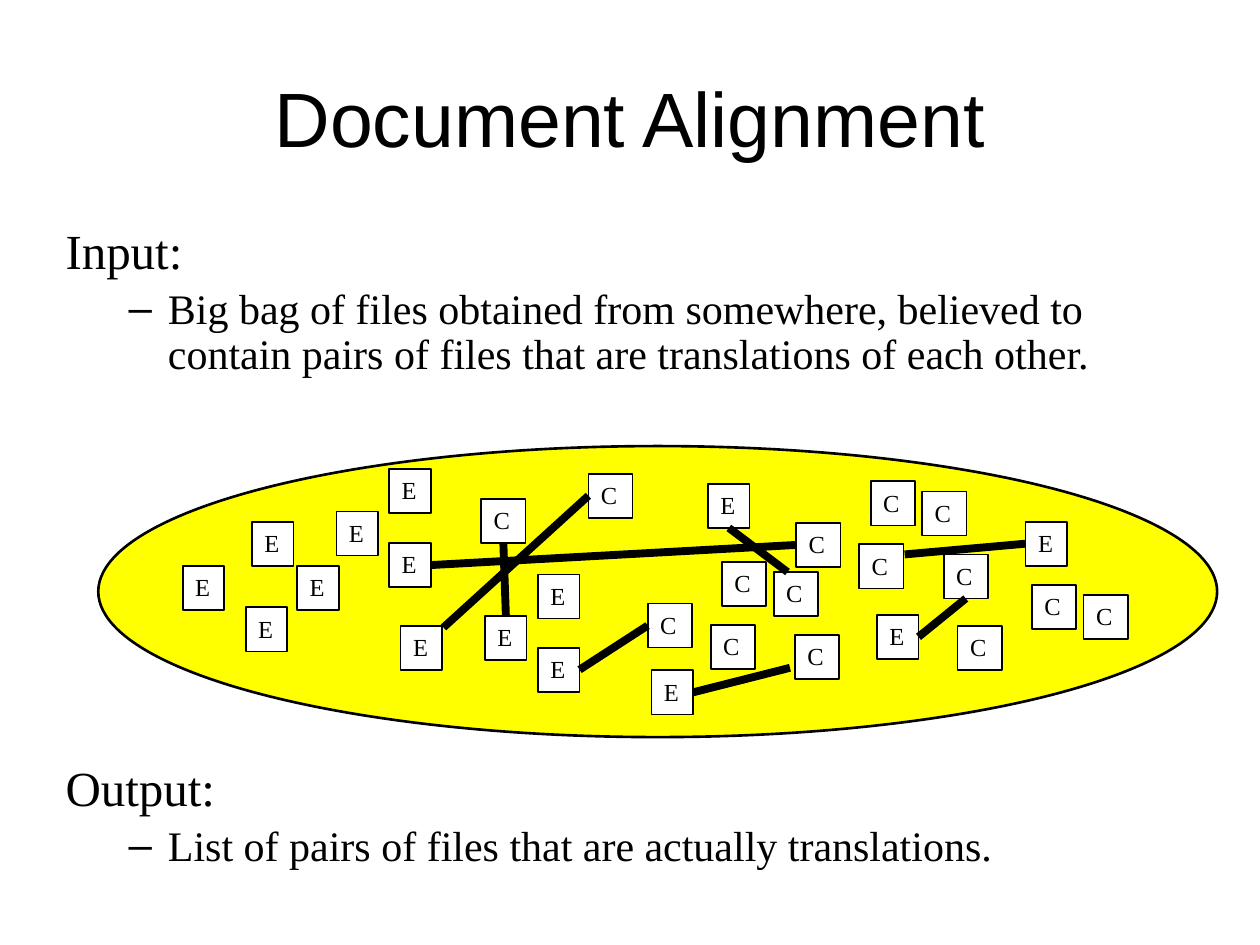
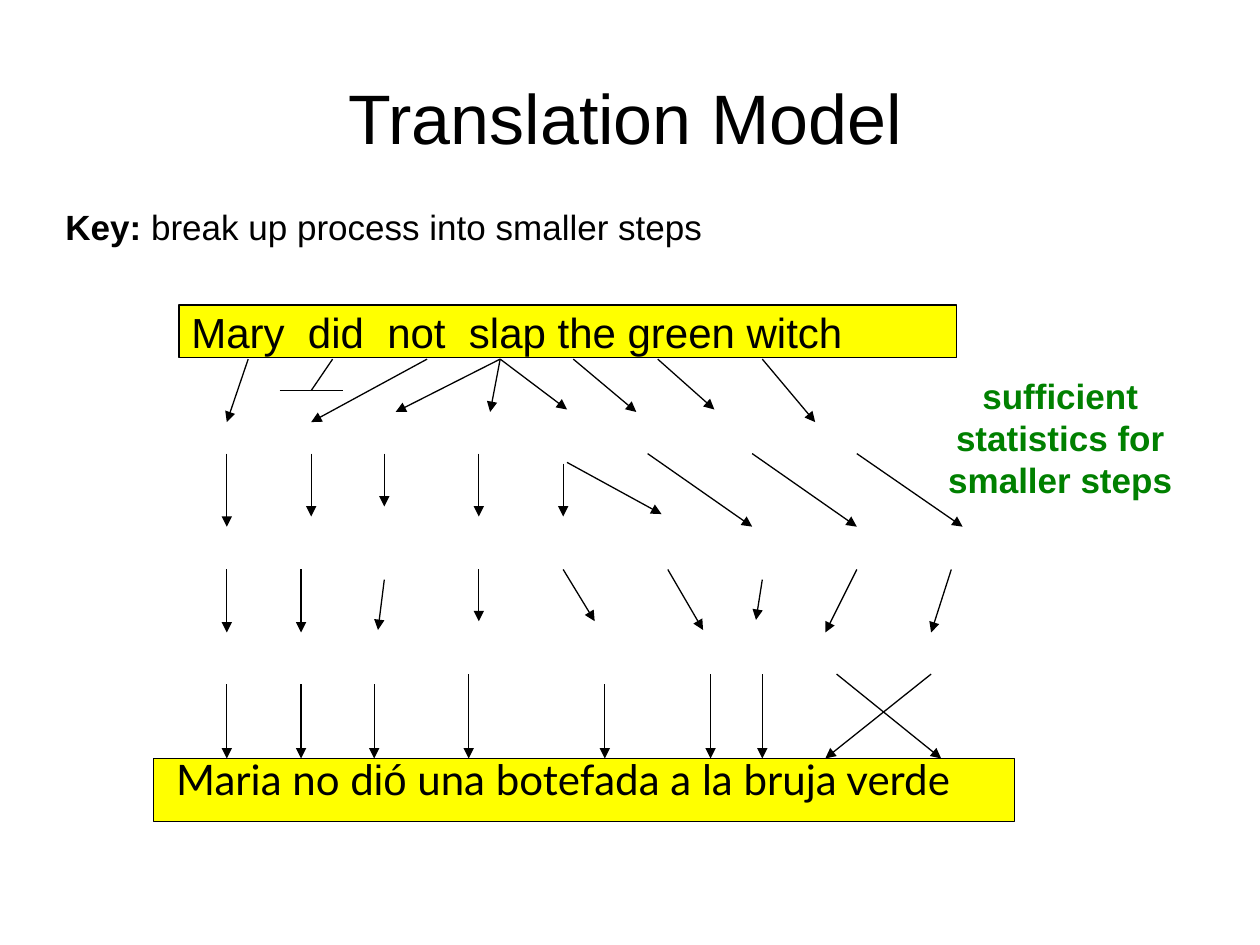
from math import dist

from lxml.etree import SubElement
from pptx import Presentation
from pptx.dml.color import RGBColor
from pptx.enum.shapes import MSO_CONNECTOR, MSO_SHAPE
from pptx.enum.text import MSO_ANCHOR, PP_ALIGN
from pptx.oxml.ns import qn
from pptx.util import Inches, Pt

COLORS = {name: RGBColor.from_string(value) for name, value in {
    "ink": "000000", "paper": "FFFFFF", "highlight": "FFFF00", "note": "008000"}.items()}
SERIF, SANS, SPANISH = "Times New Roman", "Arial", "Lato"


def style(paragraph, font, size, color="ink", align=PP_ALIGN.LEFT):
    paragraph.font.name = font
    paragraph.font.size = Pt(size)
    paragraph.font.color.rgb = COLORS[color]
    paragraph.alignment = align


def add_item(slide, kind, box, fill=None, width=0.75):
    lengths = [Inches(value) for value in box]
    if kind == "line":
        item = slide.shapes.add_connector(MSO_CONNECTOR.STRAIGHT, *lengths)
    elif kind == "text":
        item = slide.shapes.add_textbox(*lengths)
        return item
    else:
        item = slide.shapes.add_shape(kind, *lengths)
        item.shadow.inherit = False
        item.fill.solid()
        item.fill.fore_color.rgb = COLORS[fill]
        item.text_frame.word_wrap = False
    item.line.color.rgb = COLORS["ink"]
    item.line.width = Pt(width)
    if kind == "line":
        SubElement(item._element.spPr, qn("a:effectLst"))
    return item


presentation = Presentation()
presentation.slide_width, presentation.slide_height = Inches(10), Inches(7.5)

slides = []
for layout, title_text, left, width, size in (
    (1, "Document Alignment", 0.5, 9, 44),
    (5, "Translation Model", 0.17, 9.58, 40),
):
    slide = presentation.slides.add_slide(presentation.slide_layouts[layout])
    title = slide.shapes.title
    title.left, title.top = Inches(left), Inches(0.3)
    title.width, title.height = Inches(width), Inches(1.25)
    title.text_frame.text = title_text
    title.text_frame.vertical_anchor = MSO_ANCHOR.MIDDLE
    style(title.text_frame.paragraphs[0], SANS, size, align=PP_ALIGN.CENTER)
    slides.append(slide)
alignment, translation = slides

body = alignment.placeholders[1]
body.left, body.top = Inches(0.42), Inches(1.75)
body.width, body.height = Inches(9.17), Inches(4.95)
outline = (
    ("Input:", 0),
    ("Big bag of files obtained from somewhere, believed to contain pairs of files "
     "that are translations of each other.", 1),
    ("Output:", 0),
    ("List of pairs of files that are actually translations.", 1),
)
body.text_frame.text = "\n".join(text for text, level in outline)
for paragraph, (text, level) in zip(body.text_frame.paragraphs, outline):
    paragraph.level = level
    paragraph.line_spacing = 0.9
    style(paragraph, SERIF, 24 if level else 28)
    if level == 0:
        properties = paragraph._p.get_or_add_pPr()
        properties.set("marL", "0")
        properties.set("indent", "0")
        SubElement(properties, qn("a:buNone"))
body.text_frame.paragraphs[2].space_before = Pt(220)

add_item(alignment, MSO_SHAPE.OVAL, (0.78, 3.54, 8.88, 2.31), "highlight", 1.5)

files = {
    "E": (0.33, [
        (6.96, 4.88), (2.67, 4.06), (2, 4.14), (3.09, 3.72), (3.09, 4.31), (5.62, 3.84),
        (3.85, 4.89), (3.18, 4.97), (4.27, 4.56), (4.27, 5.14), (1.45, 4.49),
        (1.95, 4.82), (5.17, 5.32), (2.36, 4.49), (8.14, 4.14)]),
    "C": (0.35, [
        (6.91, 3.82), (6.32, 4.15), (6.82, 4.32), (7.32, 3.9), (7.49, 4.4), (5.73, 4.46),
        (5.14, 4.79), (5.64, 4.96), (6.14, 4.54), (6.31, 5.04), (8.19, 4.64),
        (7.6, 4.97), (3.82, 3.96), (8.6, 4.72), (4.67, 3.76)]),
}
file_height = 0.35
side_middles = []
for language, (file_width, corners) in files.items():
    for left, top in corners:
        file_box = add_item(alignment, MSO_SHAPE.RECTANGLE,
                            (left, top, file_width, file_height), "paper", 1)
        file_box.text_frame.text = language
        file_box.text_frame.vertical_anchor = MSO_ANCHOR.TOP
        style(file_box.text_frame.paragraphs[0], SERIF, 14)
        center, middle = left + file_width / 2, top + file_height / 2
        for side, point in enumerate(((center, top), (left, middle),
                                      (center, top + file_height),
                                      (left + file_width, middle))):
            side_middles.append((point, file_box, side))

file_pairs = (
    (3.98, 4.3, 4.03, 4.9), (4.59, 5.33, 5.16, 4.98), (4.67, 3.98, 3.52, 4.98),
    (3.4, 4.46, 6.32, 4.3), (5.82, 4.19, 6.25, 4.54), (5.49, 5.54, 6.27, 5.3),
    (7.29, 5.03, 7.68, 4.75), (8.14, 4.27, 7.18, 4.4),
)
for pair in file_pairs:
    connector = add_item(alignment, "line", pair, width=4.5)
    for end, connect in ((pair[:2], connector.begin_connect),
                         (pair[2:], connector.end_connect)):
        point, file_box, side = min(side_middles, key=lambda entry: dist(entry[0], end))
        if dist(point, end) < 0.05:
            connect(file_box, side)

english = add_item(translation, MSO_SHAPE.RECTANGLE, (1.42, 2.42, 6.17, 0.42), "highlight")
english.text_frame.text = "Mary  did  not  slap the green witch"
style(english.text_frame.paragraphs[0], SANS, 24)
add_item(translation, MSO_SHAPE.RECTANGLE, (1.22, 6.02, 6.83, 0.5), "highlight")

for dropped_word_line in ((2.22, 3.1, 2.72, 3.1), (2.64, 2.85, 2.47, 3.1)):
    add_item(translation, "line", dropped_word_line)

fertility_arrows = [(start, 2.85, end, bottom) for start, end, bottom in (
    (1.97, 1.8, 3.35), (3.39, 2.47, 3.35), (3.97, 3.14, 3.27), (3.97, 3.89, 3.27),
    (3.97, 4.5, 3.25), (4.55, 5.05, 3.27), (5.22, 5.67, 3.25), (6.05, 6.47, 3.35))]
insertion_arrows = [
    (1.8, 3.6, 1.8, 4.18), (2.47, 3.6, 2.47, 4.1), (3.05, 3.6, 3.05, 4.02),
    (3.8, 3.6, 3.8, 4.1), (4.47, 3.68, 4.47, 4.1), (4.5, 3.67, 5.25, 4.08),
    (5.14, 3.6, 5.97, 4.18), (5.97, 3.6, 6.8, 4.18), (6.8, 3.6, 7.64, 4.18)]
word_arrows = [
    (1.8, 4.52, 1.8, 5.02), (2.39, 4.52, 2.39, 5.02), (3.05, 4.6, 3, 5),
    (3.8, 4.52, 3.8, 4.93), (4.47, 4.52, 4.72, 4.93), (5.3, 4.52, 5.58, 5),
    (6.05, 4.6, 6, 4.92), (6.8, 4.52, 6.55, 5.02), (7.55, 4.52, 7.39, 5.02)]
order_arrows = [(start, top, end, 6.02) for start, top, end in (
    (1.8, 5.43, 1.8), (2.39, 5.43, 2.39), (2.97, 5.43, 2.97), (3.72, 5.35, 3.72),
    (4.8, 5.43, 4.8), (5.64, 5.35, 5.64), (6.05, 5.35, 6.05), (6.64, 5.35, 7.47),
    (7.39, 5.35, 6.55))]
for arrow_points in fertility_arrows + insertion_arrows + word_arrows + order_arrows:
    arrow = add_item(translation, "line", arrow_points)
    SubElement(arrow.line._get_or_add_ln(), qn("a:tailEnd"), type="triangle")

spanish = add_item(translation, "text", (1.3, 5.93, 6.49, 0.5))
paragraph = spanish.text_frame.paragraphs[0]
style(paragraph, SPANISH, 24)
for text, font in (("Maria no d", SPANISH), ("ió", SANS),
                   (" una botefada a la bruja verde", SPANISH)):
    run = paragraph.add_run()
    run.text = text
    run.font.name = font

key = add_item(translation, "text", (0.42, 1.58, 5.3, 0.44))
paragraph = key.text_frame.paragraphs[0]
style(paragraph, SANS, 20)
for text, bold in (("Key: ", True), ("break up process into smaller steps", False)):
    run = paragraph.add_run()
    run.text = text
    run.font.bold = bold

note = add_item(translation, "text", (7.33, 2.92, 2.17, 1.1))
note.text_frame.word_wrap = True
note.text_frame.text = "sufficient statistics for smaller steps"
paragraph = note.text_frame.paragraphs[0]
style(paragraph, SANS, 20, "note", PP_ALIGN.CENTER)
paragraph.font.bold = True

presentation.save("out.pptx")
